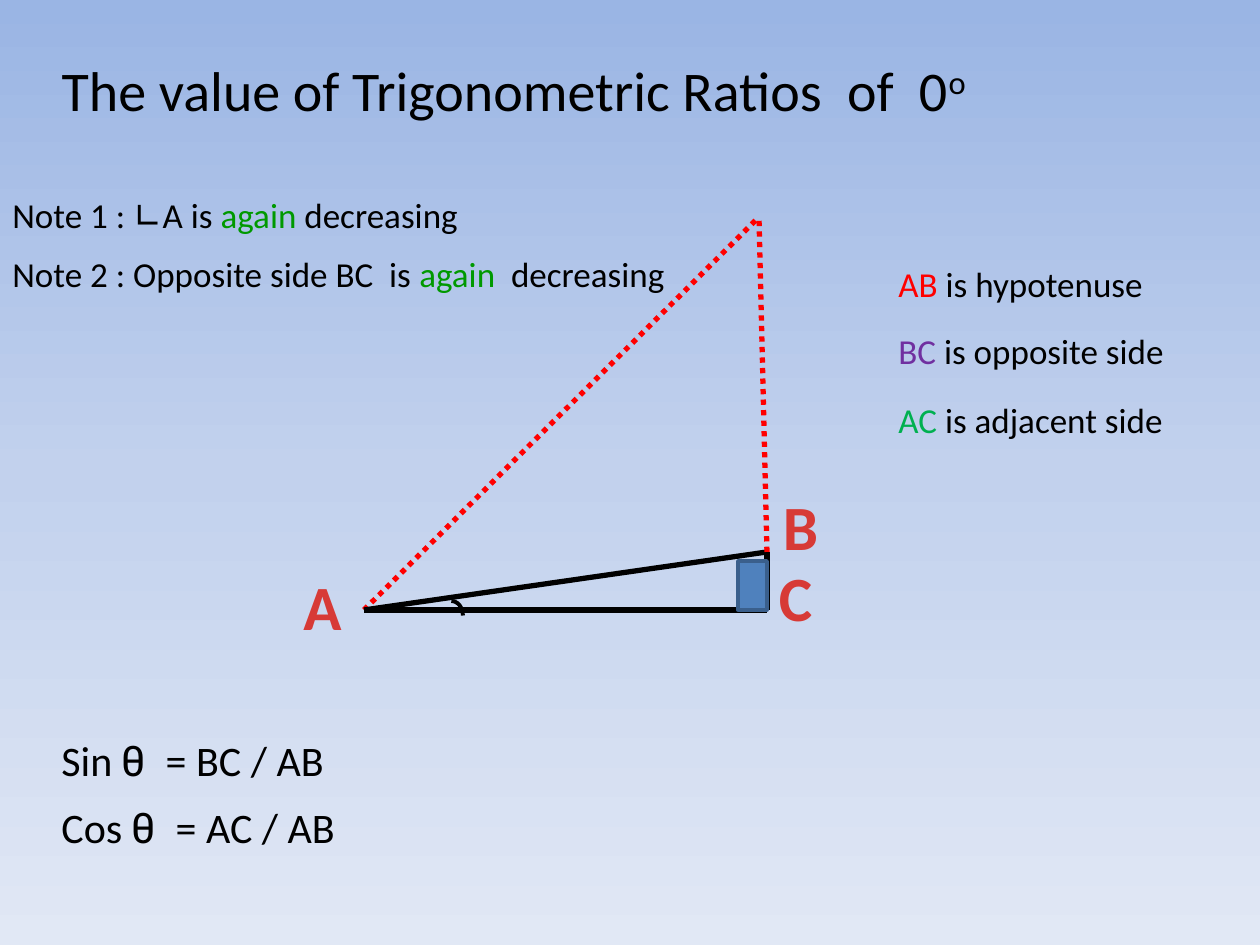
"""Build the slide on trigonometric ratios of 0 degrees."""
from copy import deepcopy

from lxml import etree
from pptx import Presentation
from pptx.dml.color import RGBColor
from pptx.enum.dml import MSO_LINE
from pptx.enum.shapes import MSO_CONNECTOR, MSO_SHAPE
from pptx.enum.text import MSO_ANCHOR, MSO_AUTO_SIZE, PP_ALIGN
from pptx.oxml.ns import qn
from pptx.util import Emu, Pt

STRAIGHT = MSO_CONNECTOR.STRAIGHT
DOTTED = MSO_LINE.ROUND_DOT
RECT, ARC = MSO_SHAPE.RECTANGLE, MSO_SHAPE.ARC
LEFT, CENTER = PP_ALIGN.LEFT, PP_ALIGN.CENTER
BLACK, RED, GREEN, LABEL = "000000", "FF0000", "009900", "D73A36"
SANS, SLAB = "Calibri", "Roboto Slab"
PX = 914400 / 126


def px(*values):
    return [Emu(round(v * PX)) for v in values]


def write(sp, box, size, runs, align=LEFT, bold=False):
    sp.left, sp.top, sp.width, sp.height = px(*box)
    tf = sp.text_frame
    tf.word_wrap = True
    tf.auto_size = MSO_AUTO_SIZE.SHAPE_TO_FIT_TEXT
    tf.vertical_anchor = MSO_ANCHOR.TOP
    p = tf.paragraphs[0]
    p.alignment = align
    for text, color, font in runs:
        r = p.add_run()
        r.text = text
        r.font.size, r.font.name, r.font.bold = Pt(size), font, bold
        r.font.color.rgb = RGBColor.from_string(color)


prs = Presentation()
prs.slide_width, prs.slide_height = px(1260, 945)
s = prs.slides.add_slide(prs.slide_layouts[5])

fill = s.background.fill
fill.gradient()
fill.gradient_angle = 270
stops = s._element.find(".//" + qn("a:gsLst"))
stops.insert(1, deepcopy(stops[0]))
for stop, pos, color in zip(fill.gradient_stops, (0, 0.5, 1), ("9AB5E4", "C2D1ED", "E1E8F5")):
    stop.position = pos
    stop.color.rgb = RGBColor.from_string(color)

title = s.shapes.title
write(title, (49, 49, 945, 81), 32,
      [("The value of Trigonometric Ratios  of  0", BLACK, SANS), ("o", BLACK, SANS)])
title.text_frame.paragraphs[0].runs[1].font._element.set("baseline", "30000")

A, B, C, TOP = (364, 610), (767, 552), (767, 610), (759, 217)
for start, end, color, dash in [
    (A, C, BLACK, None),
    (A, TOP, RED, DOTTED),
    (B, C, BLACK, None),
    (A, B, BLACK, None),
    (B, TOP, RED, DOTTED),
]:
    line = s.shapes.add_connector(STRAIGHT, *px(*start, *end))
    line.line.color.rgb = RGBColor.from_string(color)
    line.line.width = Pt(3)
    if dash:
        line.line.dash_style = dash
    etree.SubElement(line._element.spPr, qn("a:effectLst"))

for kind, box, color, width in [
    (RECT, (738, 561, 29, 49), "3A5F8C", 2),
    (ARC, (440, 601, 23, 29), BLACK, 2.25),
]:
    sp = s.shapes.add_shape(kind, *px(*box))
    sp.shadow.inherit = False
    sp.line.color.rgb = RGBColor.from_string(color)
    sp.line.width = Pt(width)
    if kind == RECT:
        sp.fill.solid()
        sp.fill.fore_color.rgb = RGBColor.from_string("4F81BD")
    else:
        sp.fill.background()

for name, x, y in [("A", 286, 561), ("B", 764, 481), ("C", 759, 552)]:
    sp = s.shapes.add_textbox(0, 0, 0, 0)
    write(sp, (x, y, 73, 89), 36, [(name, LABEL, SANS)], CENTER, True)

for box, size, runs in [
    ((886, 256, 305, 55), 20, [("AB", RED, SANS), (" is hypotenuse", BLACK, SANS)]),
    ((886, 323, 305, 55), 20, [("BC", "7030A0", SANS), (" is opposite side", BLACK, SANS)]),
    ((886, 392, 295, 55), 20, [("AC", "00B050", SANS), (" is adjacent side", BLACK, SANS)]),
    ((49, 728, 344, 63), 24,
     [("Sin ", BLACK, SANS), ("θ ", BLACK, SLAB), (" = BC / AB", BLACK, SANS)]),
    ((49, 795, 344, 63), 24,
     [("Cos ", BLACK, SANS), ("θ ", BLACK, SLAB), (" = AC / AB", BLACK, SANS)]),
    ((0, 187, 532, 55), 20,
     [("Note 1 : ", BLACK, SANS), ("∟", BLACK, SLAB), ("A is ", BLACK, SANS),
      ("again", GREEN, SANS), (" decreasing", BLACK, SANS)]),
    ((0, 246, 709, 55), 20,
     [("Note 2 : Opposite side BC  is ", BLACK, SANS), ("again", GREEN, SANS),
      ("  decreasing", BLACK, SANS)]),
]:
    write(s.shapes.add_textbox(0, 0, 0, 0), box, size, runs)

prs.save("out.pptx")
